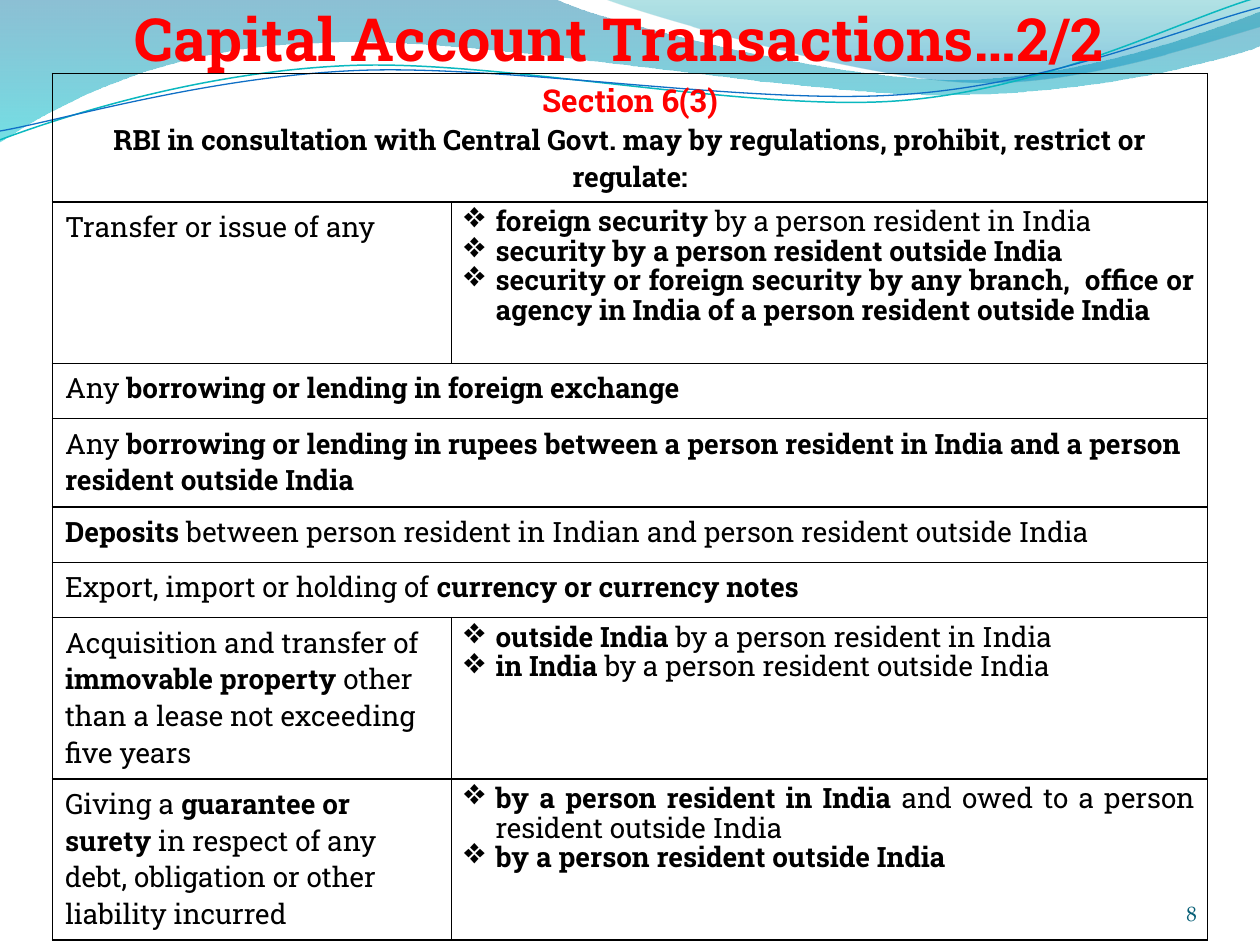
import math

import lxml.etree
import pptx
import pptx.dml.color
import pptx.enum.text
import pptx.oxml.ns
import pptx.util

COLORS = {
    "red": "FF0000", "black": "000000", "number": "045D75",
    "deep": "0074A1", "aqua": "00C6CF", "teal": "00A1A9", "blue": "008BBF",
    "teal_line": "0AB8BF", "blue_line": "0F6FC6",
}
SLAB = "Roboto Slab"
SERIF = "TeX Gyre Pagella"
GRID_COLUMNS = 10
GRID_ROWS = 7.5
CELL = pptx.util.Inches(1)
CURVE_TILT = -2.7
ALIGN = pptx.enum.text.PP_ALIGN
ANCHOR = pptx.enum.text.MSO_ANCHOR

TABLE_LEFT = 5 / 12
TABLE_TOP = 7 / 12
COLUMN_WIDTHS = [19 / 6, 6]
ROW_HEIGHTS = [1.02, 1.28, 0.44, 0.7, 0.44, 0.44, 1.28, 1.28]

TABLE_ROWS = [
    [["Transfer or issue of any"],
     [["*foreign security ", "by a person resident in India"],
      ["*security by a person resident outside India"],
      ["*security or foreign security by any branch,  office or agency in India "
       "of a person resident outside India"]]],
    [["Any ", "*borrowing or lending in foreign exchange"]],
    [["Any ", "*borrowing or lending in rupees between a person resident in India "
      "and a person resident outside India"]],
    [["*Deposits", " between person resident in Indian and person resident outside India"]],
    [["Export, import or holding of ", "*currency or currency notes"]],
    [["Acquisition and transfer of ", "*immovable property ",
      "other than a lease not exceeding five years"],
     [["*outside India ", "by a person resident in India"],
      ["*in India ", "by a person resident outside India"]]],
    [["Giving a ", "*guarantee or surety",
      " in respect of any debt, obligation or other liability incurred"],
     [["*by a person resident in India ", "and owed to a person resident outside India"],
      ["*by a person resident outside India"]]],
]

BACK_WAVE = [
    [(0, 0)], [(4.4, -0.01)],
    [(4.76, 0.17), (6.64, 0.63), (7.58, 0.63)],
    [(8.53, 0.63), (9.58, 0.26), (10, 0.09)],
    [(10.01, 0.36)],
    [(9.83, 0.44), (8.7, 0.76), (7.46, 0.75)],
    [(6.22, 0.75), (3.82, 0.28), (2.57, 0.34)],
    [(1.29, 0.36), (0.46, 0.83), (-0.01, 1.13)],
    [(0, 0)],
]
FRONT_WAVE = [
    [(4.79, -0.01)],
    [(5.09, 0.11), (6.82, 0.62), (7.69, 0.65)],
    [(8.56, 0.69), (9.61, 0.32), (10, 0.21)],
    [(10, 0)], [(4.79, -0.01)],
]
TEAL_CURVE = [
    [(0, 1.11)],
    [(0.48, 0.93), (1.58, 0.57), (2.77, 0.52)],
    [(3.95, 0.47), (5.93, 0.89), (7.13, 0.8)],
    [(8.33, 0.71), (9.38, 0.15), (9.98, -0.02)],
]
BLUE_CURVE = [
    [(0, 1.04)],
    [(0.47, 0.96), (1.64, 0.61), (2.83, 0.56)],
    [(4.03, 0.51), (5.97, 0.84), (7.17, 0.75)],
    [(8.36, 0.67), (9.41, 0.21), (10, 0.06)],
]


def grid(count):
    return round(count * CELL)


def color(name):
    return pptx.dml.color.RGBColor.from_string(COLORS[name])


def add_element(parent, tag, **attributes):
    return lxml.etree.SubElement(parent, pptx.oxml.ns.qn(tag), attributes)


def turn(segments, center, degrees):
    cosine, sine = math.cos(math.radians(degrees)), math.sin(math.radians(degrees))
    center_x, center_y = center
    return [[(center_x + (x - center_x) * cosine - (y - center_y) * sine,
              center_y + (x - center_x) * sine + (y - center_y) * cosine)
             for x, y in segment] for segment in segments]


def add_outline(slide, segments, close):
    points = [(grid(x), grid(y)) for segment in segments for x, y in segment]
    builder = slide.shapes.build_freeform(*points[0])
    builder.add_line_segments(points[1:], close=close)
    shape = builder.convert_to_shape()
    shape.shadow.inherit = False
    lines = iter(list(shape.element.spPr.iter(pptx.oxml.ns.qn("a:lnTo"))))
    for segment in segments[1:]:
        steps = [next(lines) for point in segment]
        if len(steps) == 3:
            curve = lxml.etree.Element(pptx.oxml.ns.qn("a:cubicBezTo"))
            steps[0].addprevious(curve)
            for step in steps:
                curve.append(step[0])
                step.getparent().remove(step)
    return shape


def add_wave(slide, segments, stops):
    shape = add_outline(slide, segments, True)
    shape.line.fill.background()
    shape.fill.gradient()
    shape.fill.gradient_angle = 270
    for stop, (position, name, opacity) in zip(shape.fill.gradient_stops, stops):
        stop.position = position
        stop.color.rgb = color(name)
    fill_colors = list(shape.element.spPr.iter(pptx.oxml.ns.qn("a:srgbClr")))
    for fill_color, (position, name, opacity) in zip(fill_colors, stops):
        add_element(fill_color, "a:alpha", val=str(opacity * 1000))


def add_curve(slide, segments, center, name, width):
    shape = add_outline(slide, turn(segments, center, -CURVE_TILT), False)
    shape.rotation = CURVE_TILT
    shape.fill.background()
    shape.line.color.rgb = color(name)
    shape.line.width = pptx.util.Pt(width)


def add_run(paragraph, text, size, name="black", bold=False, font=SLAB):
    run = paragraph.add_run()
    run.text = text
    run.font.size = pptx.util.Pt(size)
    run.font.name = font
    run.font.bold = bold
    run.font.color.rgb = color(name)


def add_marked_runs(paragraph, texts):
    for text in texts:
        add_run(paragraph, text.removeprefix("*"), 16, bold=text.startswith("*"))


def add_label(slide, box, text, alignment, top_inset, **style):
    shape = slide.shapes.add_textbox(*map(grid, box))
    frame = shape.text_frame
    frame.word_wrap = True
    frame.vertical_anchor = ANCHOR.BOTTOM
    frame.margin_left = frame.margin_right = frame.margin_bottom = 0
    frame.margin_top = grid(top_inset)
    frame.paragraphs[0].alignment = alignment
    add_run(frame.paragraphs[0], text, **style)


def add_bullets(frame, items):
    for index, texts in enumerate(items):
        paragraph = frame.add_paragraph() if index else frame.paragraphs[0]
        paragraph.alignment = ALIGN.JUSTIFY
        paragraph.line_spacing = 0.8
        properties = paragraph._p.get_or_add_pPr()
        properties.set("marL", str(grid(0.25)))
        properties.set("indent", str(grid(-0.25)))
        add_element(properties, "a:buSzPct", val="130000")
        add_element(properties, "a:buChar", char="❖")
        add_marked_runs(paragraph, texts)


def style_cell(cell):
    properties = cell._tc.get_or_add_tcPr()
    for side in ("L", "R", "T", "B"):
        border = add_element(properties, f"a:ln{side}", w=str(pptx.util.Pt(1)))
        fill = add_element(border, "a:solidFill")
        add_element(fill, "a:srgbClr", val=COLORS["black"])
    cell.fill.background()


def add_heading(cell):
    title = cell.text_frame.paragraphs[0]
    add_run(title, "Section 6(3)", 18, "red", True)
    rule = cell.text_frame.add_paragraph()
    add_run(rule, "RBI in consultation with Central Govt. may by regulations, "
            "prohibit, restrict or regulate:", 16, bold=True)
    title.alignment = rule.alignment = ALIGN.CENTER


def add_rules_table(slide):
    box = (TABLE_LEFT, TABLE_TOP, sum(COLUMN_WIDTHS), sum(ROW_HEIGHTS))
    table = slide.shapes.add_table(
        len(ROW_HEIGHTS), len(COLUMN_WIDTHS), *map(grid, box)).table
    table.first_row = table.horz_banding = False
    for column, width in zip(table.columns, COLUMN_WIDTHS):
        column.width = grid(width)
    for row, height in zip(table.rows, ROW_HEIGHTS):
        row.height = grid(height)
    for cell in table.iter_cells():
        style_cell(cell)
    table.cell(0, 0).merge(table.cell(0, 1))
    add_heading(table.cell(0, 0))
    for index, (texts, *bullets) in enumerate(TABLE_ROWS, start=1):
        subject = table.cell(index, 0)
        add_marked_runs(subject.text_frame.paragraphs[0], texts)
        if bullets:
            add_bullets(table.cell(index, 1).text_frame, bullets[0])
        else:
            subject.merge(table.cell(index, 1))


def main():
    presentation = pptx.Presentation()
    presentation.slide_width = grid(GRID_COLUMNS)
    presentation.slide_height = grid(GRID_ROWS)
    slide = presentation.slides.add_slide(presentation.slide_layouts[6])
    add_wave(slide, BACK_WAVE, [(0, "deep", 45), (1, "aqua", 55)])
    add_wave(slide, FRONT_WAVE, [(0, "teal", 30), (0.8, "blue", 45)])
    add_curve(slide, TEAL_CURVE, (4.99, 0.58), "teal_line", 0.85)
    add_curve(slide, BLUE_CURVE, (5, 0.59), "blue_line", 0.75)
    add_label(slide, (TABLE_LEFT, 0, 9, TABLE_TOP), "Capital Account Transactions…2/2",
              ALIGN.CENTER, 0.05, size=34, name="red", bold=True)
    add_label(slide, (8.67, 6.95, 0.83, 0.4), "8", ALIGN.RIGHT, 0,
              size=12, name="number", font=SERIF)
    add_rules_table(slide)
    presentation.save("out.pptx")


if __name__ == "__main__":
    main()
